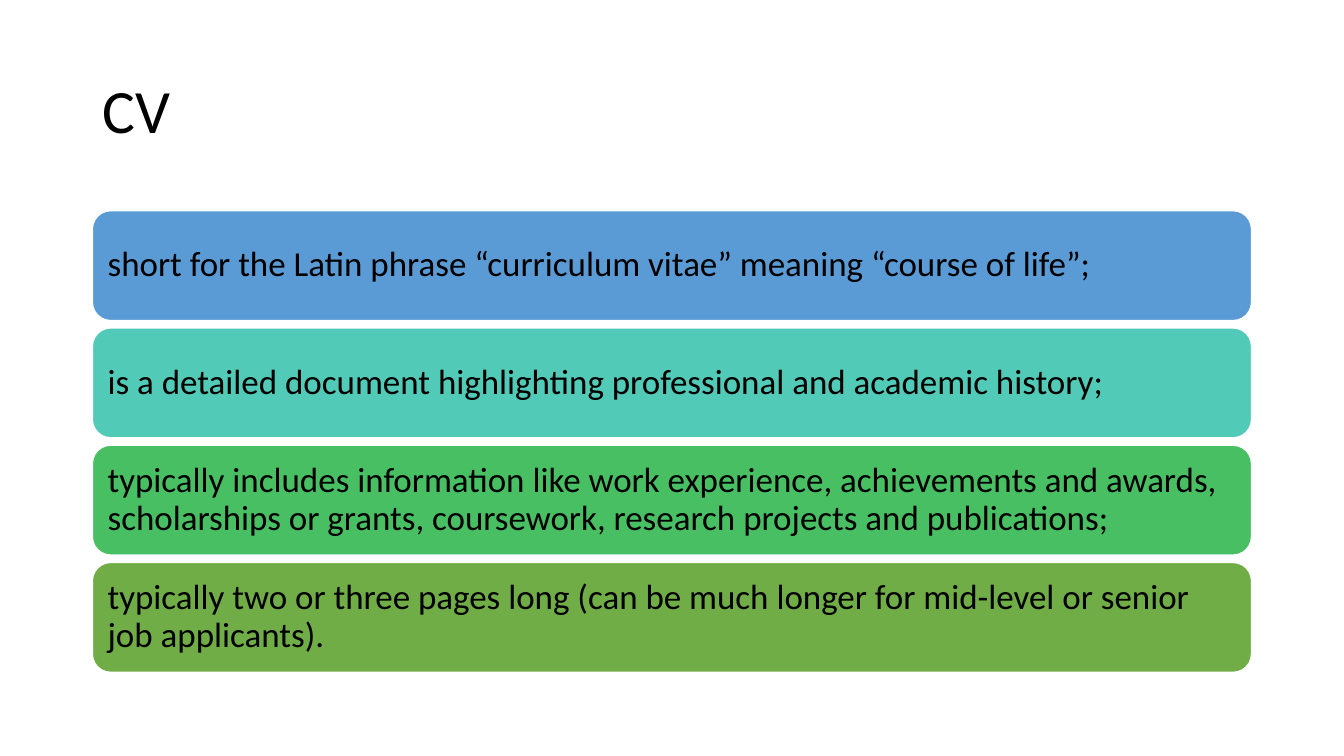
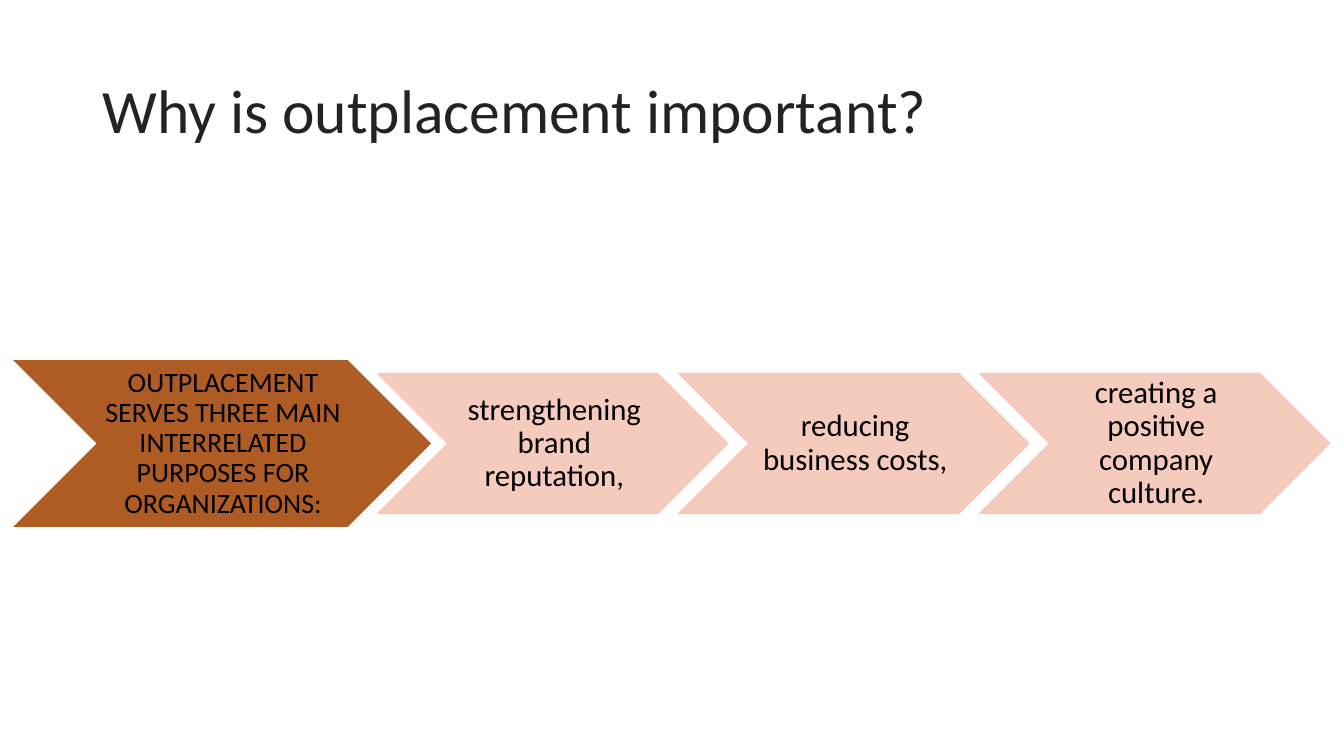
from dataclasses import dataclass

from lxml import etree
from pptx import Presentation
from pptx import util as u
from pptx.dml.color import RGBColor
from pptx.enum import shapes, text
from pptx.oxml import ns

# Grid: 160 columns by 90 rows of square cells
CELL = u.Pt(6)
COLUMNS, ROWS = 160, 90
LEFT, WIDTH = 11, 138

FONT = "Calibri"
BLACK, WHITE = "000000", "FFFFFF"
TITLE_LAYOUT = 5


@dataclass(frozen=True)
class Area:
    left: float
    top: float
    width: float
    height: float


@dataclass(frozen=True)
class Style:
    """Shape kind, text size, alignment and insets in cells."""
    kind: shapes.MSO_SHAPE
    size: int
    align: text.PP_ALIGN
    insets: tuple[float, float, float, float]
    line: str = WHITE
    opacity: int = 100


@dataclass(frozen=True)
class Item:
    words: str
    fill: str


TITLE_AREA = Area(LEFT, 4.8, WIDTH, 17.4)

BAR = Style(shapes.MSO_SHAPE.ROUNDED_RECTANGLE, 25, text.PP_ALIGN.LEFT,
            (1.2, 1.2, 1.2, 1.2))
BAR_TOP, BAR_HEIGHT, BAR_PITCH = 25.08, 13.08, 13.96
BARS = [
    Item("short for the Latin phrase “curriculum vitae” meaning “course of life”;",
         "5B9BD5"),
    Item("is a detailed document highlighting professional and academic history;",
         "52CAB8"),
    Item("typically includes information like work experience, achievements and "
         "awards, scholarships or grants, coursework, research projects and "
         "publications;", "49BF64"),
    Item("typically two or three pages long (can be much longer for mid-level or "
         "senior job applicants).", "70AD47"),
]

PINK = "F5C6B6"
LEAD = Style(shapes.MSO_SHAPE.CHEVRON, 20, text.PP_ALIGN.CENTER,
             (0.32, 0.16, 0, 0.16))
STEP = Style(shapes.MSO_SHAPE.CHEVRON, 22, text.PP_ALIGN.CENTER,
             (0.36, 0.18, 0, 0.18), PINK, 90)
LEAD_LEFT, LEAD_WIDTH = 1.32, 50.16
STEP_LEFT, STEP_WIDTH, STEP_PITCH = 45, 41.64, 35.82
CHEVRON_MIDDLE, CHEVRON_RATIO = 52.8, 0.4
PURPOSE = Item("OUTPLACEMENT SERVES THREE MAIN INTERRELATED PURPOSES FOR "
               "ORGANIZATIONS:", "AF5C24")
STEPS = [Item(words, PINK) for words in (
    "strengthening brand reputation,",
    "reducing business costs,",
    "creating a positive company culture.",
)]


def cells(count: float) -> u.Length:
    return u.Emu(round(count * CELL))


def colour(value: str) -> RGBColor:
    return RGBColor.from_string(value)


def place(box, area: Area) -> None:
    box.left, box.top = cells(area.left), cells(area.top)
    box.width, box.height = cells(area.width), cells(area.height)


def write(box, words: str, size: int, ink: str, align: text.PP_ALIGN) -> None:
    frame = box.text_frame
    frame.text = words
    frame.word_wrap = True
    frame.auto_size = text.MSO_AUTO_SIZE.NONE
    frame.vertical_anchor = text.MSO_ANCHOR.MIDDLE
    para = frame.paragraphs[0]
    para.alignment = align
    para.line_spacing = 0.9
    font = para.runs[0].font
    font.name, font.size = FONT, u.Pt(size)
    font.color.rgb = colour(ink)


def add_page(deck, title: str, ink: str):
    page = deck.slides.add_slide(deck.slide_layouts[TITLE_LAYOUT])
    place(page.shapes.title, TITLE_AREA)
    write(page.shapes.title, title, 44, ink, text.PP_ALIGN.LEFT)
    return page


def set_opacity(box, percent: int) -> None:
    for tint in box._element.spPr.iter(ns.qn("a:srgbClr")):
        etree.SubElement(tint, ns.qn("a:alpha")).set("val", str(percent * 1000))


def add_block(page, item: Item, area: Area, style: Style) -> None:
    box = page.shapes.add_shape(style.kind, 0, 0, CELL, CELL)
    place(box, area)
    box.shadow.inherit = False
    box.fill.solid()
    box.fill.fore_color.rgb = colour(item.fill)
    box.line.color.rgb = colour(style.line)
    box.line.width = u.Pt(1)
    if style.opacity < 100:
        set_opacity(box, style.opacity)
    write(box, item.words, style.size, BLACK, style.align)
    frame = box.text_frame
    (frame.margin_left, frame.margin_top,
     frame.margin_right, frame.margin_bottom) = map(cells, style.insets)


def chevron_area(left: float, width: float) -> Area:
    height = width * CHEVRON_RATIO
    return Area(left, CHEVRON_MIDDLE - height / 2, width, height)


def main() -> None:
    deck = Presentation()
    deck.slide_width, deck.slide_height = cells(COLUMNS), cells(ROWS)

    # Stacked bars
    page = add_page(deck, "CV", BLACK)
    for row, item in enumerate(BARS):
        area = Area(LEFT, BAR_TOP + row * BAR_PITCH, WIDTH, BAR_HEIGHT)
        add_block(page, item, area, BAR)

    # Chevron chain
    page = add_page(deck, "Why is outplacement important?", "232323")
    add_block(page, PURPOSE, chevron_area(LEAD_LEFT, LEAD_WIDTH), LEAD)
    for column, item in enumerate(STEPS):
        left = STEP_LEFT + column * STEP_PITCH
        add_block(page, item, chevron_area(left, STEP_WIDTH), STEP)

    deck.save("out.pptx")


if __name__ == "__main__":
    main()
